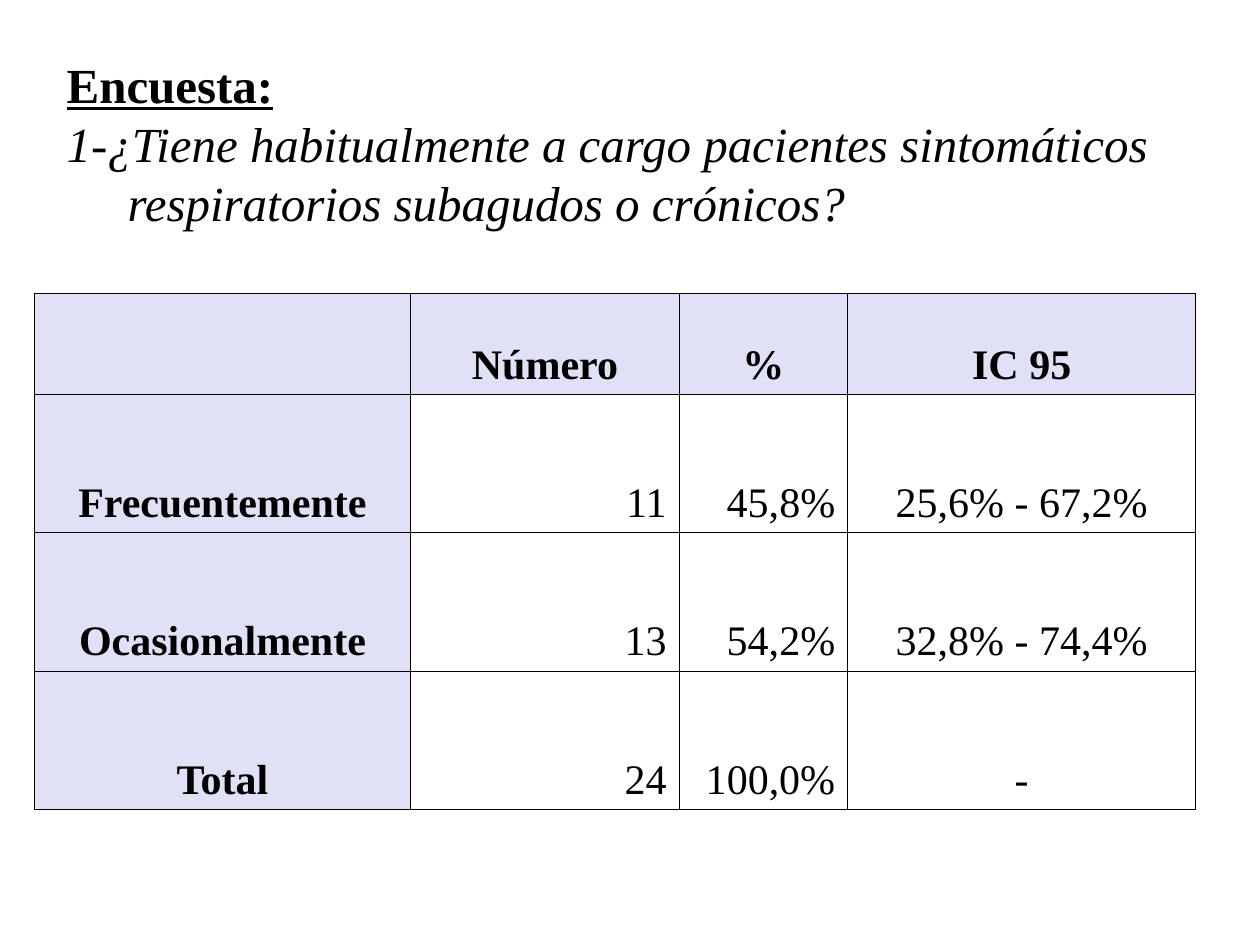
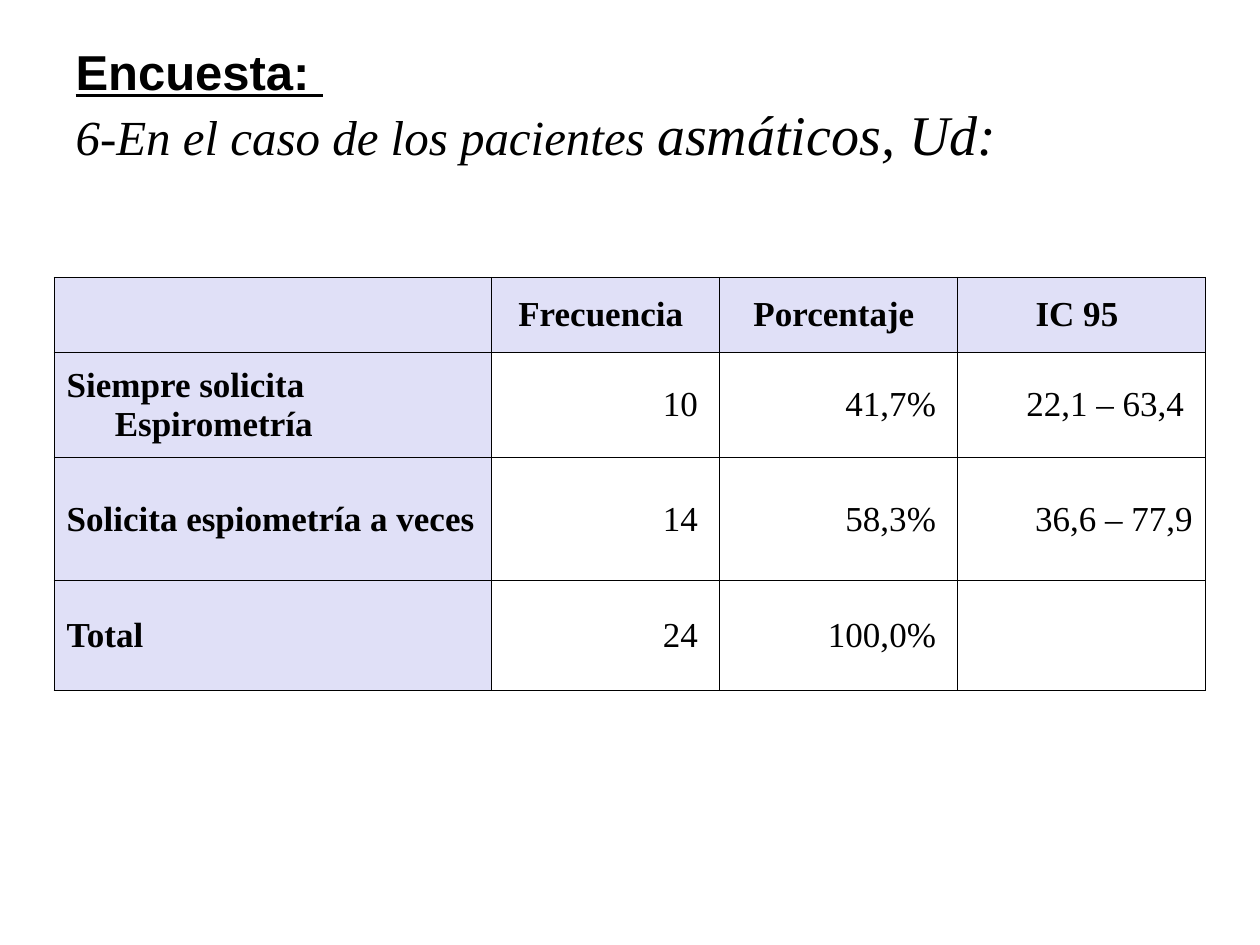
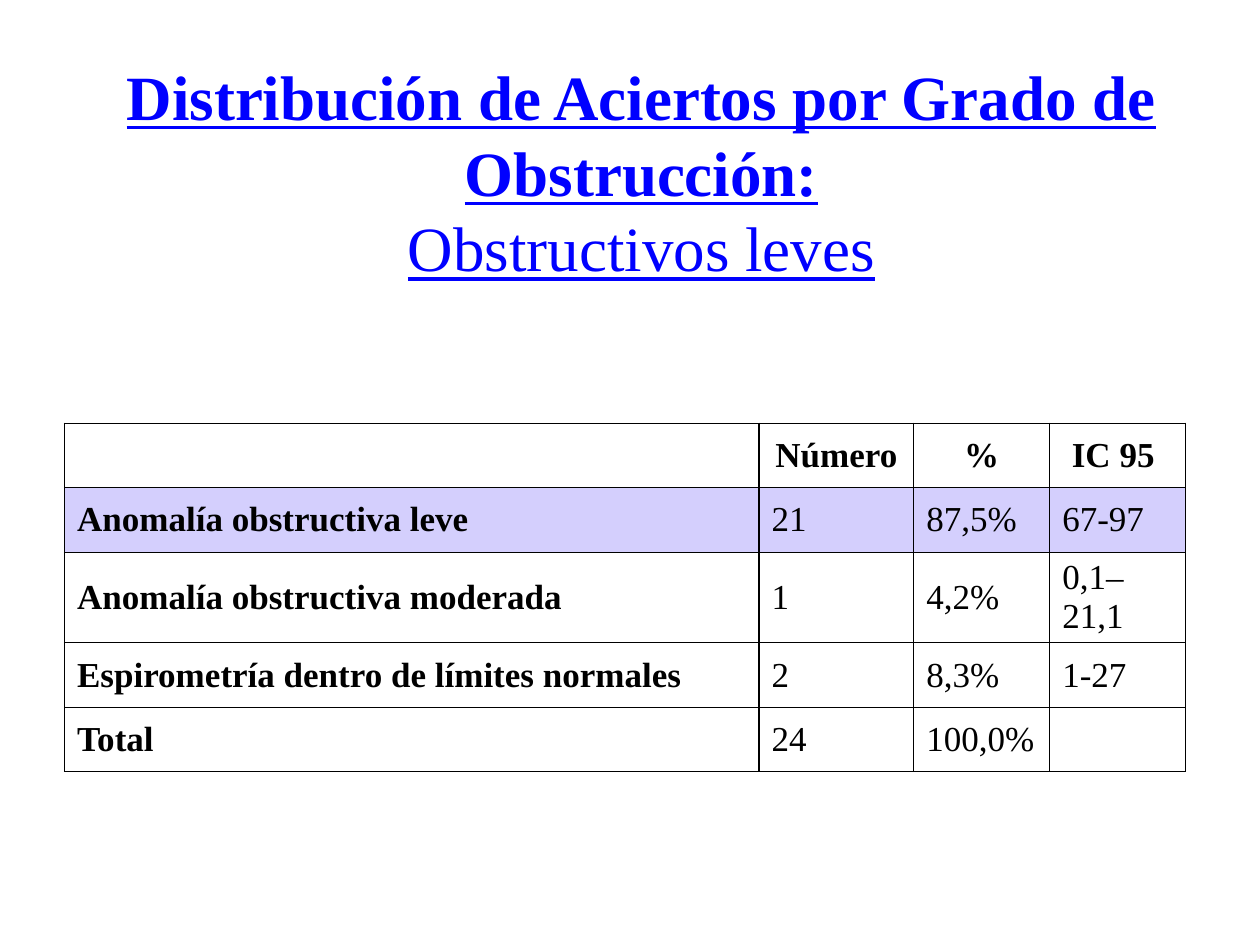
from lxml.etree import SubElement
from pptx import Presentation
from pptx.dml.color import RGBColor
from pptx.enum.text import MSO_ANCHOR, MSO_AUTO_SIZE, PP_ALIGN
from pptx.oxml.ns import qn
from pptx.util import Cm, Pt

SERIF, SANS = "Times New Roman", "Arial"
BLACK, BLUE = "000000", "0000FF"
LILAC, VIOLET = "C2C2F0", "D4CFFD"
LEFT, MID, RIGHT = PP_ALIGN.LEFT, PP_ALIGN.CENTER, PP_ALIGN.RIGHT


def color(code):
    return RGBColor.from_string(code)


def style(run, size, font=SERIF, tone=BLACK, bold=False, line=False, slant=False):
    run.font.name = font
    run.font.size = Pt(size)
    run.font.color.rgb = color(tone)
    run.font.bold, run.font.italic, run.font.underline = bold, slant, line


def indent(para, left, first=0):
    props = para._p.get_or_add_pPr()
    props.set("marL", str(Cm(left)))
    props.set("indent", str(Cm(first)))


def add_title(slide, box, lines, align=LEFT):
    """Fill the title; each line is a list of (text, style) pairs."""
    title = slide.shapes.title
    title.left, title.top, title.width, title.height = map(Cm, box)
    frame = title.text_frame
    frame.word_wrap = True
    frame.auto_size = MSO_AUTO_SIZE.NONE
    frame.vertical_anchor = MSO_ANCHOR.MIDDLE
    for i, parts in enumerate(lines):
        para = frame.add_paragraph() if i else frame.paragraphs[0]
        para.alignment = align
        for text, look in parts:
            run = para.add_run()
            run.text = text
            style(run, **look)
    return frame


def border(cell):
    props = cell._tc.get_or_add_tcPr()
    for side in ("lnL", "lnR", "lnT", "lnB"):
        edge = SubElement(props, qn(f"a:{side}"), w=str(Pt(0.75)))
        fill = SubElement(edge, qn("a:solidFill"))
        SubElement(fill, qn("a:srgbClr"), val=BLACK)


def paint(cell, tone, alpha=100):
    if not tone:
        cell.fill.background()
        return
    cell.fill.solid()
    cell.fill.fore_color.rgb = color(tone)
    if alpha < 100:
        code = cell._tc.tcPr.find(f"{qn('a:solidFill')}/{qn('a:srgbClr')}")
        SubElement(code, qn("a:alpha"), val=str(alpha * 1000))


def add_grid(slide, spot, widths, heights, rows, size, aligns, shade,
             hang=0, leads=None):
    """Draw a table with bold first row and column.

    aligns holds one alignment per body column, shade(row, col) gives the
    arguments of paint, and leads holds one line spacing per row.
    """
    frame = slide.shapes.add_table(len(rows), len(widths), *map(Cm, spot),
                                   Cm(sum(widths)), Cm(sum(heights)))
    grid = frame.table
    for col, width in zip(grid.columns, widths):
        col.width = Cm(width)
    for r, (texts, height) in enumerate(zip(rows, heights)):
        grid.rows[r].height = Cm(height)
        for c, text in enumerate(texts):
            cell = grid.cell(r, c)
            border(cell)
            paint(cell, *shade(r, c))
            cell.vertical_anchor = MSO_ANCHOR.MIDDLE
            if not text:
                continue
            para = cell.text_frame.paragraphs[0]
            para.text = text
            para.alignment = aligns[c] if r else MID
            if leads:
                para.line_spacing = leads[r]
            if hang:
                indent(para, hang, -hang)
            style(para.runs[0], size, bold=r == 0 or c == 0)


def edges(row, col):
    """Tint the first row and the first column."""
    return (LILAC, 50) if row == 0 or col == 0 else (None,)


def second(row, col):
    return (VIOLET,) if row == 1 else (None,)


HEAD = dict(size=28, bold=True, line=True)
ASK = dict(size=28, slant=True)


def add_load(slide):
    frame = add_title(slide, (1.09, 0.97, 23.6, 3.81), [
        [("Encuesta:", HEAD)],
        [("1-¿Tiene habitualmente a cargo pacientes sintomáticos", ASK)],
        [("respiratorios subagudos o crónicos?", ASK)],
    ])
    indent(frame.paragraphs[2], 1.23)
    rows = [
        ("", "Número", "%", "IC 95"),
        ("Frecuentemente", "11", "45,8%", "25,6% - 67,2%"),
        ("Ocasionalmente", "13", "54,2%", "32,8% - 74,4%"),
        ("Total", "24", "100,0%", "-"),
    ]
    add_grid(slide, (0.69, 5.92), (7.59, 5.41, 3.4, 7.01),
             [2.03] + [2.79] * 3, rows, 24, (MID, RIGHT, RIGHT, MID), edges,
             leads=[1.9] + [2.7] * 3)


def add_asthma(slide):
    add_title(slide, (1.27, 0.75, 22.86, 2.7), [
        [("Encuesta: ", dict(HEAD, font=SANS))],
        [("6-En el caso de los pacientes ", ASK),
         ("asmáticos, Ud:", dict(ASK, size=32))],
    ])
    rows = [
        ("", "Frecuencia ", "Porcentaje ", "IC 95 "),
        ("Siempre solicita Espirometría", "10 ", "41,7% ", "22,1 – 63,4 "),
        ("Solicita espiometría a veces", "14 ", "58,3% ", "36,6 – 77,9"),
        ("Total", "24 ", "100,0% ", ""),
    ]
    add_grid(slide, (1.09, 5.59), (8.81, 4.6, 4.8, 5),
             (1.52, 2.11, 2.49, 2.21), rows, 20, (LEFT, RIGHT, RIGHT, RIGHT),
             edges, hang=0.97)


def add_hits(slide):
    look = dict(size=36, tone=BLUE, line=True)
    add_title(slide, (1.5, 1.1, 22.86, 4.7), [
        [("Distribución de Aciertos por Grado de Obstrucción:",
          dict(look, bold=True))],
        [("Obstructivos leves", look)],
    ], MID)
    rows = [
        ("", "Número", "%", "IC 95 "),
        ("Anomalía obstructiva leve", "21", "87,5%", "67-97"),
        ("Anomalía obstructiva moderada", "1", "4,2%", "0,1–21,1"),
        ("Espirometría dentro de límites normales", "2", "8,3%", "1-27"),
        ("Total", "24", "100,0%", ""),
    ]
    add_grid(slide, (1.3, 8.53), (14, 3.12, 2.74, 2.74),
             (1.3, 1.3, 1.83, 1.3, 1.3), rows, 20, [LEFT] * 4, second)


def main():
    deck = Presentation()
    deck.slide_width, deck.slide_height = Cm(25.4), Cm(19.05)
    for build in (add_load, add_asthma, add_hits):
        build(deck.slides.add_slide(deck.slide_layouts[5]))
    deck.save("out.pptx")


if __name__ == "__main__":
    main()
